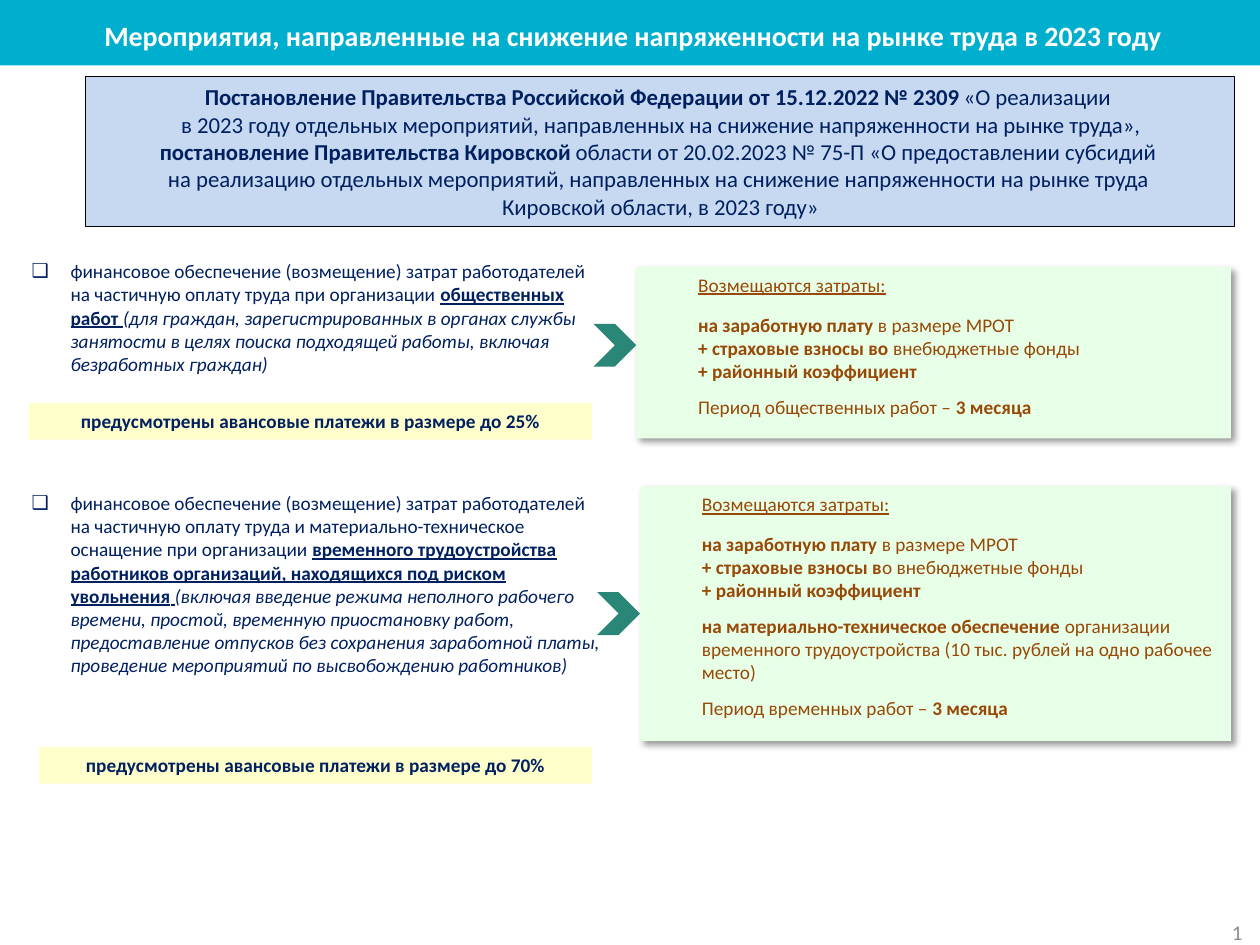
from dataclasses import dataclass
from typing import NamedTuple

from lxml.etree import SubElement
from pptx import Presentation
from pptx.dml.color import RGBColor
from pptx.enum.shapes import MSO_SHAPE as Preset
from pptx.enum.text import MSO_ANCHOR as Anchor, MSO_AUTO_SIZE as AutoSize, PP_ALIGN as Align
from pptx.oxml.ns import qn
from pptx.util import Emu, Inches, Pt

# Grid: 100 columns by 75 rows of square cells
COLUMNS, ROWS = 100, 75
SLIDE_WIDTH, SLIDE_HEIGHT = Inches(10), Inches(7.5)
CELL = SLIDE_WIDTH // COLUMNS
ARROW_SIZE = 3.4
FONT = "Calibri"

NAVY = RGBColor(0x00, 0x20, 0x60)
BROWN = RGBColor(0x98, 0x48, 0x07)
BLACK = RGBColor(0x00, 0x00, 0x00)
WHITE = RGBColor(0xFF, 0xFF, 0xFF)
GREY = RGBColor(0x8C, 0x8C, 0x8C)
CYAN = RGBColor(0x00, 0xAE, 0xCD)
PALE_BLUE = RGBColor(0xC6, 0xD9, 0xF1)
PALE_GREEN = RGBColor(0xE7, 0xFF, 0xE7)
PALE_YELLOW = RGBColor(0xFF, 0xFF, 0xCC)
TEAL = RGBColor(0x2A, 0x86, 0x77)


class Box(NamedTuple):
    left: float
    top: float
    width: float
    height: float

    def lengths(self) -> list[Emu]:
        return [Emu(round(value * CELL)) for value in self]


class Span(NamedTuple):
    text: str
    bold: bool = False
    italic: bool = False
    underline: bool = False


class Para(NamedTuple):
    spans: list[Span]
    space_before: float = 0


@dataclass
class Measure:
    description: Para
    card: Box
    arrow_top: float
    costs: list[Para]
    note: Box
    advance: str


def reimbursed(bold_part: str, plain_part: str) -> list[Para]:
    """Cost lines that open every card."""
    return [
        Para([Span("Возмещаются затраты:", underline=True)]),
        Para([Span("на заработную плату ", bold=True), Span("в размере МРОТ")], 9.5),
        Para([Span(bold_part, bold=True), Span(plain_part)]),
        Para([Span("+ районный коэффициент", bold=True)]),
    ]


def period(works: str) -> Para:
    return Para([Span(f"Период {works} работ – "), Span("3 месяца", bold=True)], 7.3)


DECREES = [
    Para([Span("Постановление Правительства Российской Федерации от 15.12.2022 № 2309 ", bold=True),
          Span("«О реализации ")]),
    Para([Span("в 2023 году отдельных мероприятий, направленных на снижение напряженности на рынке труда»,")]),
    Para([Span("постановление Правительства Кировской ", bold=True),
          Span("области от 20.02.2023 № 75-П «О предоставлении субсидий ")]),
    Para([Span("на реализацию отдельных мероприятий, направленных на снижение напряженности на рынке труда ")]),
    Para([Span("Кировской области, в 2023 году»")]),
]

MEASURES = [
    Measure(
        Para([Span("финансовое обеспечение (возмещение) затрат работодателей на частичную оплату труда "
                   "при организации "),
              Span("общественных работ", bold=True, underline=True), Span(" ", underline=True),
              Span("(для граждан, зарегистрированных в органах службы занятости в целях поиска "
                   "подходящей работы, включая безработных граждан)", italic=True)]),
        Box(50.5, 21.2, 47.2, 13.6), 25.7,
        reimbursed("+ страховые взносы во", " внебюджетные фонды") + [period("общественных")],
        Box(2.3, 32, 44.7, 2.9), "25%"),
    Measure(
        Para([Span("финансовое обеспечение (возмещение) затрат работодателей на частичную оплату труда "
                   "и материально-техническое оснащение при организации "),
              Span("временного трудоустройства работников организаций, находящихся под риском увольнения",
                   bold=True, underline=True), Span(" ", underline=True),
              Span("(включая введение режима неполного рабочего времени, простой, временную приостановку "
                   "работ, предоставление отпусков без сохранения заработной платы, проведение "
                   "мероприятий по высвобождению работников)", italic=True)], 66.5),
        Box(50.8, 38.6, 46.9, 20.2), 47,
        reimbursed("+ страховые взносы в", "о внебюджетные фонды") + [
            Para([Span("на материально-техническое обеспечение ", bold=True),
                  Span("организации временного трудоустройства (10 тыс. рублей на одно рабочее место)")], 7.3),
            period("временных")],
        Box(3.1, 59.3, 43.9, 2.9), "70%"),
]


def write(shape, paras: list[Para], size: float, color: RGBColor,
          align: Align = Align.LEFT, anchor: Anchor = Anchor.TOP) -> None:
    frame = shape.text_frame
    frame.auto_size = AutoSize.NONE
    frame.word_wrap = True
    frame.vertical_anchor = anchor
    for index, item in enumerate(paras):
        para = frame.paragraphs[0] if index == 0 else frame.add_paragraph()
        para.alignment = align
        para.space_before = Pt(item.space_before)
        for span in item.spans:
            run = para.add_run()
            run.text = span.text
            run.font.name, run.font.size = FONT, Pt(size)
            run.font.color.rgb = color
            run.font.bold, run.font.italic = span.bold, span.italic
            run.font.underline = span.underline


def draw_shape(page, box: Box, fill: RGBColor, preset: Preset = Preset.RECTANGLE):
    shape = page.shapes.add_shape(preset, *box.lengths())
    shape.shadow.inherit = False
    shape.fill.solid()
    shape.fill.fore_color.rgb = fill
    shape.line.fill.background()
    return shape


def move(shape, box: Box) -> None:
    shape.left, shape.top, shape.width, shape.height = box.lengths()


def cast_shadow(shape) -> None:
    effects = shape._element.spPr.find(qn("a:effectLst"))
    shadow = SubElement(effects, qn("a:outerShdw"), blurRad=str(Pt(4)), dist=str(Pt(3)),
                        dir=str(45 * 60000), algn="tl", rotWithShape="0")
    color = SubElement(shadow, qn("a:srgbClr"), val=str(BLACK))
    SubElement(color, qn("a:alpha"), val="40000")


def add_bullets(shape, indent: Emu) -> None:
    for para in shape.text_frame.paragraphs:
        props = para._p.get_or_add_pPr()
        props.set("marL", str(indent))
        props.set("indent", str(-indent))
        SubElement(props, qn("a:buChar"), char="❑")


def draw_measure(page, measure: Measure) -> None:
    card = draw_shape(page, measure.card, PALE_GREEN)
    cast_shadow(card)
    write(card, measure.costs, 11, BROWN)
    card.text_frame.margin_left = Inches(0.49)
    arrow = Box(measure.card.left - ARROW_SIZE, measure.arrow_top, ARROW_SIZE, ARROW_SIZE)
    draw_shape(page, arrow, TEAL, Preset.CHEVRON)
    note = draw_shape(page, measure.note, PALE_YELLOW)
    text = f"предусмотрены авансовые платежи в размере до {measure.advance}"
    write(note, [Para([Span(text, bold=True)])], 11, NAVY, Align.CENTER)


def main() -> None:
    deck = Presentation()
    deck.slide_width, deck.slide_height = SLIDE_WIDTH, SLIDE_HEIGHT
    page = deck.slides.add_slide(deck.slide_layouts[1])
    title, body = page.placeholders

    # Title on its band
    band = draw_shape(page, Box(0, 0, COLUMNS, 5.2), CYAN)
    page.shapes._spTree.insert(2, band._element)
    move(title, Box(1.2, 1.4, 98.1, 2.8))
    heading = "Мероприятия, направленные на снижение напряженности на рынке труда в 2023 году"
    write(title, [Para([Span(heading, bold=True)])], 16, WHITE, Align.CENTER, Anchor.MIDDLE)

    # Legal basis
    basis = draw_shape(page, Box(6.8, 6.1, 91.2, 11.9), PALE_BLUE)
    basis.line.color.rgb = BLACK
    basis.line.width = Pt(0.75)
    write(basis, DECREES, 13, NAVY, Align.CENTER)

    # List of measures
    move(body, Box(1.5, 18.3, 47.5, 41.7))
    write(body, [measure.description for measure in MEASURES], 11, NAVY)
    body.text_frame.margin_top = Inches(0.23)
    add_bullets(body, Inches(0.31))

    # Cards, arrows and advance notes
    for measure in MEASURES:
        draw_measure(page, measure)

    # Page number
    number = page.shapes.add_textbox(*Box(76.3, ROWS - 3.6, 23.3, 5.2).lengths())
    write(number, [Para([Span("1")])], 12, GREY, Align.RIGHT, Anchor.MIDDLE)

    deck.save("out.pptx")


if __name__ == "__main__":
    main()
